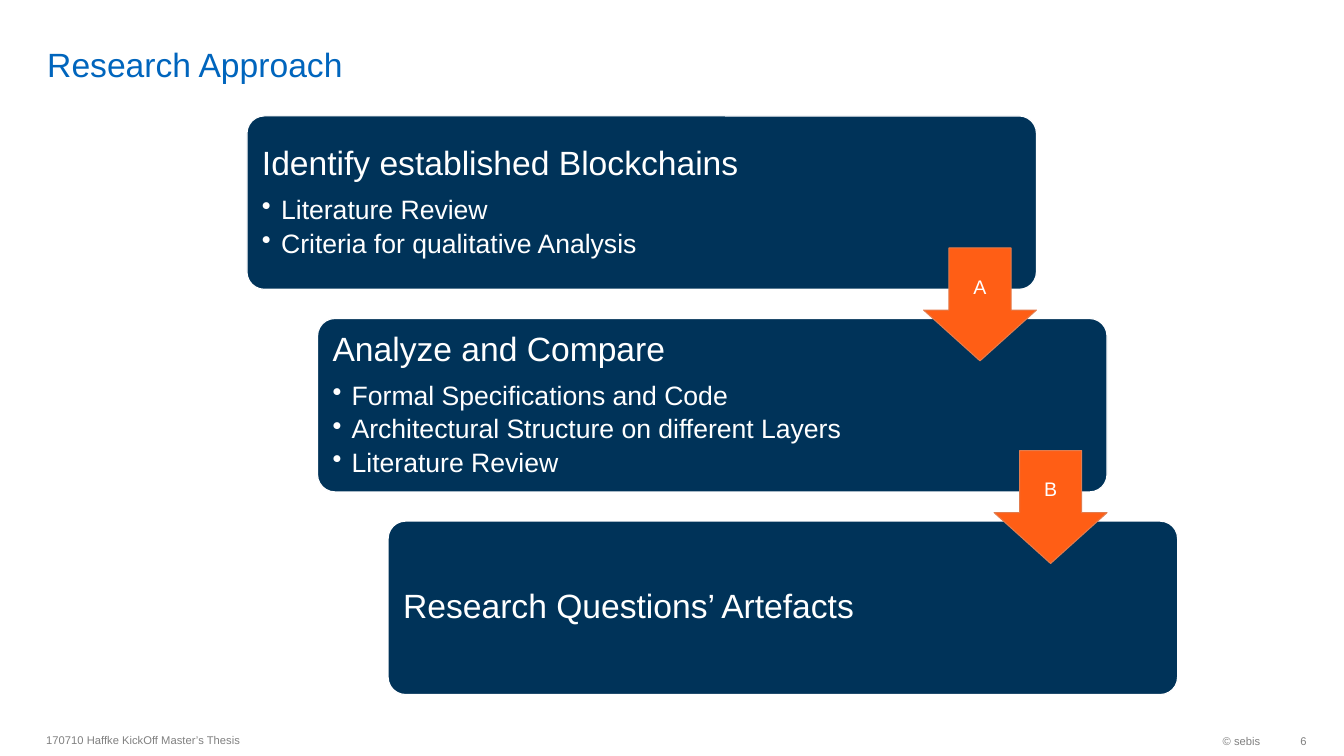
from dataclasses import dataclass

from lxml.etree import SubElement
from pptx import Presentation
from pptx.dml.color import RGBColor
from pptx.enum.shapes import MSO_SHAPE as Shape
from pptx.enum.text import MSO_ANCHOR as Anchor, PP_ALIGN as Align
from pptx.oxml.ns import qn
from pptx.util import Pt

PX = 9144  # EMU per px, 100 px to the inch


@dataclass(frozen=True)
class Theme:
    font: str = "Arial"
    title: str = "0065BD"
    footer: str = "808080"
    box: str = "003359"
    arrow: str = "FF5E15"
    arrow_line: str = "E37C4D"
    white: str = "FFFFFF"
    heading_pt: int = 24
    bullet_pt: int = 19
    arrow_pt: int = 14
    footer_pt: int = 8


@dataclass(frozen=True)
class Label:
    text: str
    at: tuple[int, int, int, int]
    size: int
    color: str
    align: Align = Align.LEFT
    anchor: Anchor = Anchor.MIDDLE
    insets: tuple[int, int, int, int] = (10, 5, 10, 5)
    wrap: bool = True


@dataclass(frozen=True)
class Step:
    heading: str
    bullets: tuple[str, ...] = ()


T = Theme()
STEP_X, STEP_Y = 70, 201
BOX = (245, 115, 783, 172)
ARROW = (916, 246, 112, 112)
INDENT = 19

LABELS = (
    Label("Research Approach", (37, 5, 1158, 79), T.heading_pt, T.title,
          anchor=Anchor.BOTTOM, insets=(10, 0, 10, 0)),
    Label("© sebis", (1026, 719, 234, 32), T.footer_pt, T.footer, Align.RIGHT, wrap=False),
    Label("170710 Haffke KickOff Master’s Thesis", (36, 718, 630, 32), T.footer_pt, T.footer),
    Label("6", (1260, 719, 36, 32), T.footer_pt, T.footer, Align.RIGHT,
          insets=(10, 5, 0, 5), wrap=False),
)
STEPS = (
    Step("Identify established Blockchains",
         ("Literature Review", "Criteria for qualitative Analysis")),
    Step("Analyze and Compare",
         ("Formal Specifications and Code", "Architectural Structure on different Layers",
          "Literature Review")),
    Step("Research Questions’ Artefacts"),
)


def emu(lengths: tuple[int, ...]) -> list[int]:
    return [n * PX for n in lengths]


def set_frame(tf, insets: tuple[int, int, int, int], anchor=Anchor.MIDDLE, wrap: bool = True) -> None:
    tf.margin_left, tf.margin_top, tf.margin_right, tf.margin_bottom = emu(insets)
    tf.vertical_anchor, tf.word_wrap = anchor, wrap


def add_run(p, text: str, size: int, color: str) -> None:
    r = p.add_run()
    r.text = text
    r.font.name, r.font.size = T.font, Pt(size)
    r.font.color.rgb = RGBColor.from_string(color)


def add_label(s, label: Label) -> None:
    tf = s.shapes.add_textbox(*emu(label.at)).text_frame
    set_frame(tf, label.insets, label.anchor, label.wrap)
    p = tf.paragraphs[0]
    p.alignment = label.align
    add_run(p, label.text, label.size, label.color)


def add_stepped(s, kind: Shape, at: tuple[int, int, int, int], i: int, adjust: tuple[float, ...],
                fill: str, line: str, width: float):
    x, y, w, h = at
    sp = s.shapes.add_shape(kind, *emu((x + i * STEP_X, y + i * STEP_Y, w, h)))
    for n, value in enumerate(adjust):
        sp.adjustments[n] = value
    sp.shadow.inherit = False
    sp.fill.solid()
    sp.fill.fore_color.rgb = RGBColor.from_string(fill)
    sp.line.color.rgb = RGBColor.from_string(line)
    sp.line.width = Pt(width)
    return sp


def add_box(s, i: int, step: Step) -> None:
    sp = add_stepped(s, Shape.ROUNDED_RECTANGLE, BOX, i, (0.1,), T.box, T.white, 0.85)
    tf = sp.text_frame
    set_frame(tf, (10, 10, 10, 10))
    p = tf.paragraphs[0]
    p.alignment, p.line_spacing, p.space_after = Align.LEFT, 0.9, Pt(10)
    add_run(p, step.heading, T.heading_pt, T.white)
    for bullet in step.bullets:
        p = tf.add_paragraph()
        p.level = 1
        p.alignment, p.line_spacing, p.space_after = Align.LEFT, 0.9, Pt(3.4)
        pPr = p._p.get_or_add_pPr()
        pPr.set("marL", str(INDENT * PX))
        pPr.set("indent", str(-INDENT * PX))
        SubElement(pPr, qn("a:buChar"), char="•")
        add_run(p, bullet, T.bullet_pt, T.white)


def add_arrow(s, i: int, letter: str) -> None:
    sp = add_stepped(s, Shape.DOWN_ARROW, ARROW, i, (0.55, 0.45), T.arrow, T.arrow_line, 0.75)
    set_frame(sp.text_frame, (2, 2, 2, 7))
    p = sp.text_frame.paragraphs[0]
    p.alignment, p.line_spacing = Align.CENTER, 0.9
    add_run(p, letter, T.arrow_pt, T.white)


def main() -> None:
    prs = Presentation()
    prs.slide_width, prs.slide_height = emu((1333, 750))
    s = prs.slides.add_slide(prs.slide_layouts[6])

    # Title and footer
    for label in LABELS:
        add_label(s, label)

    # Staircase of steps, then the arrows on top
    for i, step in enumerate(STEPS):
        add_box(s, i, step)
    for i, letter in enumerate("AB"):
        add_arrow(s, i, letter)

    prs.save("out.pptx")


if __name__ == "__main__":
    main()
